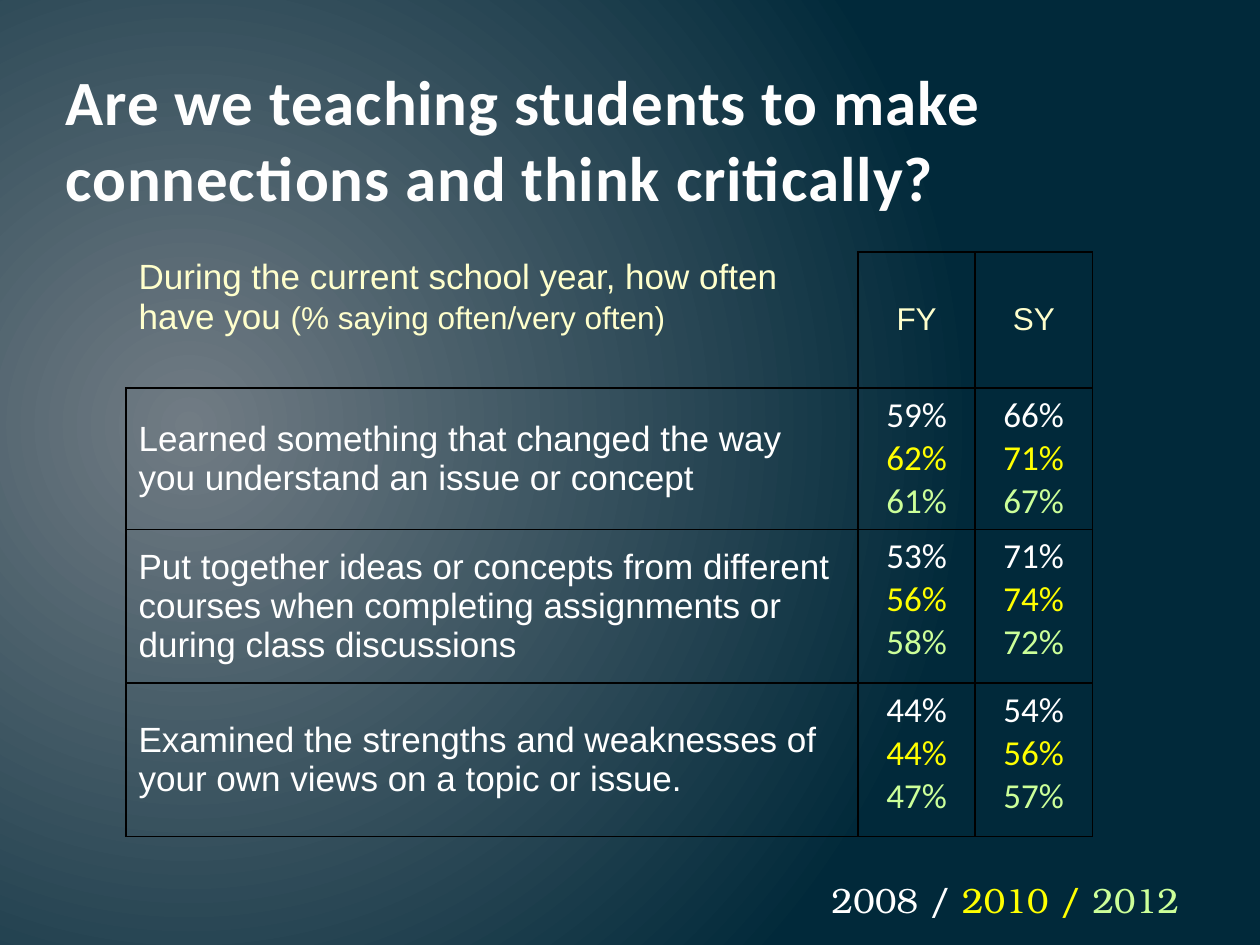
import pptx
import pptx.dml.color
import pptx.enum.text
import pptx.oxml
import pptx.oxml.ns
import pptx.util

RGBColor = pptx.dml.color.RGBColor
Inches = pptx.util.Inches
Pt = pptx.util.Pt
qn = pptx.oxml.ns.qn
ALIGN = pptx.enum.text.PP_ALIGN
ANCHOR = pptx.enum.text.MSO_ANCHOR

SLATE = RGBColor(0x71, 0x7C, 0x84)
NAVY = RGBColor(0x01, 0x29, 0x3A)
OFF_WHITE = RGBColor(0xFE, 0xFE, 0xFE)
WHITE = RGBColor(0xFF, 0xFF, 0xFF)
CREAM = RGBColor(0xFF, 0xFF, 0xCC)
YELLOW = RGBColor(0xFF, 0xFF, 0x00)
GREEN = RGBColor(0xCC, 0xFF, 0x99)
BLACK = RGBColor(0x00, 0x00, 0x00)
YEAR_COLORS = (WHITE, YELLOW, GREEN)

COLUMN_WIDTHS = (5.81, 0.93, 0.93)
ROW_HEIGHTS = (1.08, 0.94, 1.22, 1.22)
QUESTIONS = (
    ("Learned something that changed the way you understand an issue or concept",
     ("59%", "62%", "61%"), ("66%", "71%", "67%")),
    ("Put together ideas or concepts from different courses when completing "
     "assignments or during class discussions",
     ("53%", "56%", "58%"), ("71%", "74%", "72%")),
    ("Examined the strengths and weaknesses of your own views on a topic or issue.",
     ("44%", "44%", "47%"), ("54%", "56%", "57%")),
)


def add_run(paragraph, text, size, font, color):
    """Append one formatted run and return it."""
    run = paragraph.add_run()
    run.text = text
    run.font.size = Pt(size)
    run.font.name = font
    run.font.color.rgb = color
    return run


def paint_background(slide):
    """Fill the background with a circular glow left of the centre."""
    fill = slide.background.fill
    fill.gradient()
    for stop, color in zip(fill.gradient_stops, (SLATE, NAVY)):
        stop.color.rgb = color
    gradient = slide.element.find(".//" + qn("a:gradFill"))
    gradient.replace(gradient.find(qn("a:lin")), pptx.oxml.parse_xml(
        f'<a:path {pptx.oxml.ns.nsdecls("a")} path="circle">'
        '<a:fillToRect l="15000" t="50000" r="85000" b="60000"/></a:path>'))


def place_title(slide, box):
    """Set the headline in the title placeholder."""
    headline = slide.shapes.title
    headline.left, headline.top, headline.width, headline.height = box
    frame = headline.text_frame
    frame.auto_size = pptx.enum.text.MSO_AUTO_SIZE.NONE
    frame.vertical_anchor = ANCHOR.BOTTOM
    frame.paragraphs[0].alignment = ALIGN.LEFT
    run = add_run(frame.paragraphs[0],
                  "Are we teaching students to make connections and think critically?",
                  36, "Calibri", OFF_WHITE)
    run.font.bold = True
    run.font._element.set("spc", "50")


def rule_cell(cell, open_sides=""):
    """Clear the cell fill and draw its borders, except on the open sides."""
    cell.fill.background()
    for index, side in enumerate("LRTB"):
        paint = ("<a:noFill/>" if side in open_sides else
                 f'<a:solidFill><a:srgbClr val="{BLACK}"/></a:solidFill>')
        cell._tc.tcPr.insert(index, pptx.oxml.parse_xml(
            f'<a:ln{side} {pptx.oxml.ns.nsdecls("a")} w="{Pt(1)}">{paint}</a:ln{side}>'))


def fill_percentages(cell, percentages):
    """List one percentage per survey year, each in its year's colour."""
    frame = cell.text_frame
    for index, (percentage, color) in enumerate(zip(percentages, YEAR_COLORS)):
        line = frame.add_paragraph() if index else frame.paragraphs[0]
        line.alignment = ALIGN.CENTER
        add_run(line, percentage, 20, "Calibri", color)


def place_survey(slide, box):
    """Build the survey table with its heading row and three questions."""
    survey = slide.shapes.add_table(len(ROW_HEIGHTS), len(COLUMN_WIDTHS), *box).table
    survey.first_row = survey.horz_banding = False
    for column, width in zip(survey.columns, COLUMN_WIDTHS):
        column.width = Inches(width)
    for row, height in zip(survey.rows, ROW_HEIGHTS):
        row.height = Inches(height)

    prompt_cell = survey.cell(0, 0)
    for cell in survey.iter_cells():
        rule_cell(cell, "LT" if cell == prompt_cell else "")
    prompt = prompt_cell.text_frame.paragraphs[0]
    add_run(prompt, "During the current school year, how often have you ", 20, "Arial", CREAM)
    add_run(prompt, "(% saying often/very often)", 18, "Arial", CREAM)
    for column, group in enumerate(("FY", "SY"), 1):
        cell = survey.cell(0, column)
        cell.vertical_anchor = ANCHOR.MIDDLE
        heading = cell.text_frame.paragraphs[0]
        heading.alignment = ALIGN.CENTER
        add_run(heading, group, 18, "Arial", CREAM)

    for row, (question, *groups) in enumerate(QUESTIONS, 1):
        cell = survey.cell(row, 0)
        cell.vertical_anchor = ANCHOR.MIDDLE
        add_run(cell.text_frame.paragraphs[0], question, 20, "Arial", WHITE)
        for column, percentages in enumerate(groups, 1):
            fill_percentages(survey.cell(row, column), percentages)


def place_year_key(slide, box):
    """Write the colour key of the survey years."""
    frame = slide.shapes.add_textbox(*box).text_frame
    frame.word_wrap = True
    frame.auto_size = pptx.enum.text.MSO_AUTO_SIZE.SHAPE_TO_FIT_TEXT
    for year, color in zip(("2008 / ", "2010 / ", "2012"), YEAR_COLORS):
        add_run(frame.paragraphs[0], year, 20, "TeX Gyre Bonum", color)


def main():
    """Build and save the slide."""
    deck = pptx.Presentation()
    deck.slide_width, deck.slide_height = Inches(10), Inches(7.5)
    slide = deck.slides.add_slide(deck.slide_layouts.get_by_name("Title Only"))
    paint_background(slide)
    place_title(slide, [Inches(n) for n in (0.42, 0.5, 9, 1.25)])
    place_survey(slide, [Inches(n) for n in (1, 2, sum(COLUMN_WIDTHS), sum(ROW_HEIGHTS))])
    place_year_key(slide, [Inches(n) for n in (6.5, 6.92, 3, 0.44)])
    deck.save("out.pptx")


if __name__ == "__main__":
    main()
